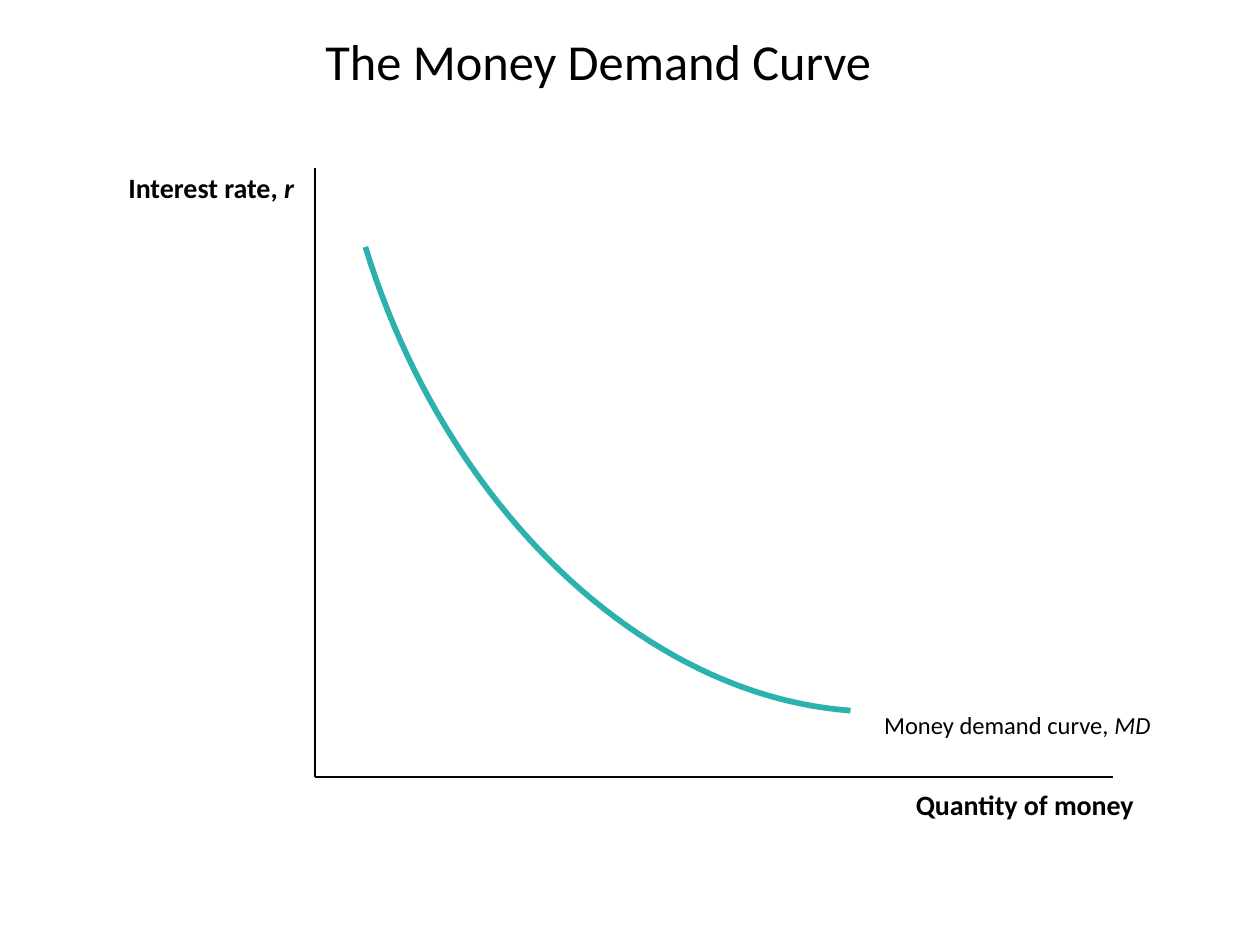
from lxml import etree
from pptx import Presentation
from pptx.dml.color import RGBColor
from pptx.enum.shapes import MSO_CONNECTOR
from pptx.enum.text import MSO_ANCHOR, PP_ALIGN
from pptx.oxml.ns import qn
from pptx.util import Pt

BLACK = RGBColor(0, 0, 0)
TEAL = RGBColor(0x2C, 0xB1, 0xAE)
LEFT, CENTER, RIGHT = PP_ALIGN.LEFT, PP_ALIGN.CENTER, PP_ALIGN.RIGHT
MIDDLE = MSO_ANCHOR.MIDDLE
STRAIGHT = MSO_CONNECTOR.STRAIGHT

ORIGIN = (180, 444)
AXIS_TOP = (180, 96)
AXIS_RIGHT = (636, 444)
DEMAND_CONTROLS = [(208.8, 141.12), (254.16, 289.44), (367.2, 397.44), (486, 406.08)]
CURVE_STEPS = 48


def add_text(slide, x, y, w, h, runs, size, align=LEFT, bold=False, wrap=True):
    s = slide.shapes.add_textbox(Pt(x), Pt(y), Pt(w), Pt(h))
    tf = s.text_frame
    tf.word_wrap = wrap
    tf.vertical_anchor = MIDDLE
    tf.margin_left = tf.margin_right = tf.margin_top = tf.margin_bottom = 0
    p = tf.paragraphs[0]
    p.alignment = align
    for text, italic in runs:
        r = p.add_run()
        r.text = text
        r.font.name = "Calibri"
        r.font.size = Pt(size)
        r.font.bold = bold
        r.font.italic = italic
        r.font.color.rgb = BLACK


def add_axis(slide, start, end):
    s = slide.shapes.add_connector(STRAIGHT, *map(Pt, start + end))
    s.line.color.rgb = BLACK
    s.line.width = Pt(1.5)
    etree.SubElement(s._element.spPr, qn("a:effectLst"))


def bezier_point(controls, t):
    weights = ((1 - t) ** 3, 3 * t * (1 - t) ** 2, 3 * t**2 * (1 - t), t**3)
    return tuple(Pt(sum(w * v for w, v in zip(weights, axis))) for axis in zip(*controls))


def add_curve(slide, controls):
    points = [bezier_point(controls, i / CURVE_STEPS) for i in range(CURVE_STEPS + 1)]
    builder = slide.shapes.build_freeform(*points[0])
    builder.add_line_segments(points[1:], close=False)
    s = builder.convert_to_shape()
    s.shadow.inherit = False
    s.fill.background()
    s.line.color.rgb = TEAL
    s.line.width = Pt(3.25)


def main():
    prs = Presentation()
    prs.slide_width, prs.slide_height = Pt(720), Pt(540)
    slide = prs.slides.add_slide(prs.slide_layouts[6])

    add_text(slide, 30, 18, 624, 32.4, [("The Money Demand Curve", False)], 28.8, CENTER)
    add_curve(slide, DEMAND_CONTROLS)
    for end in (AXIS_TOP, AXIS_RIGHT):
        add_axis(slide, ORIGIN, end)
    add_text(slide, 18, 97.5, 150, 19.5,
             [("Interest rate,", False), (" r", True)], 16, RIGHT, bold=True)
    add_text(slide, 498, 450, 150, 19.5,
             [("Quantity of money", False)], 16, RIGHT, bold=True)
    add_text(slide, 505.2, 405.6, 153.6, 17,
             [("Money demand curve, ", False), ("MD", True)], 14, wrap=False)

    prs.save("out.pptx")


if __name__ == "__main__":
    main()
